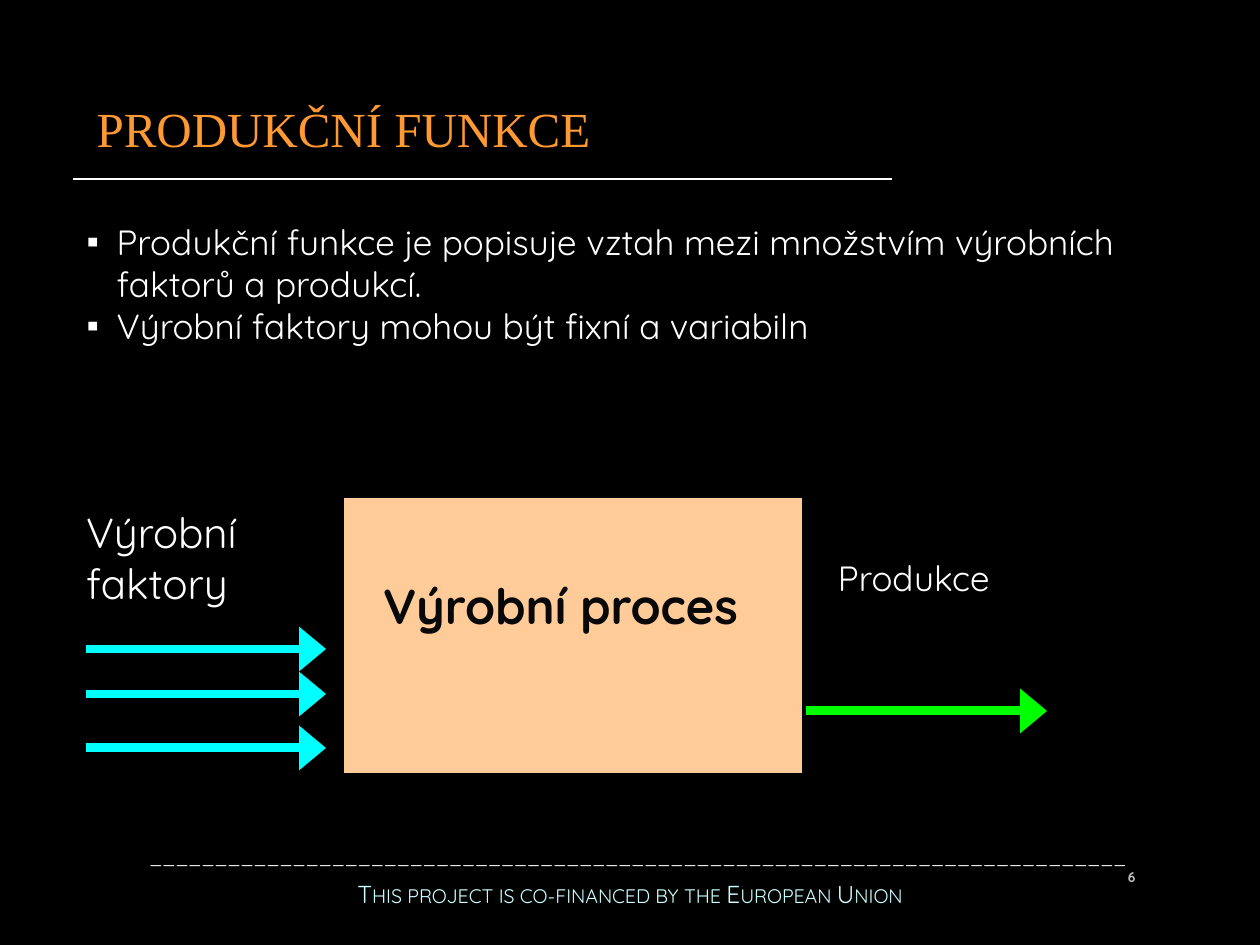
from lxml import etree
from pptx import Presentation
from pptx.dml.color import RGBColor
from pptx.enum import shapes, text
from pptx.oxml.ns import qn
from pptx.util import Pt

PX = 914400 / 126  # EMU in one px
COLORS = {
    "background": "000000", "title": "FF9933", "text": "FFFFFF", "number": "BFBFBF",
    "footer": "CCFFFF", "process": "FFCC99", "dark": "080808",
    "input": "00FFFF", "output": "00FF00",
}


def px(*lengths):
    return [round(n * PX) for n in lengths]


def write(sp, content, box=None, size=20, color="text", font="Quicksand", bold=False,
          align=text.PP_ALIGN.LEFT, anchor=text.MSO_ANCHOR.TOP, inset=None):
    """Fill a shape with one paragraph per line and return the paragraphs."""
    if box:
        sp.left, sp.top, sp.width, sp.height = px(*box)
    tf = sp.text_frame
    tf.word_wrap = True
    tf.auto_size = text.MSO_AUTO_SIZE.NONE
    tf.vertical_anchor = anchor
    if inset is not None:
        tf.margin_left = tf.margin_top = tf.margin_right = tf.margin_bottom = inset
    tf.text = content
    for p in tf.paragraphs:
        p.alignment = align
        p.space_before = Pt(0)
        for r in p.runs:
            r.font.name, r.font.size, r.font.bold = font, Pt(size), bold
            r.font.color.rgb = RGBColor.from_string(COLORS[color])
    return tf.paragraphs


prs = Presentation()
prs.slide_width, prs.slide_height = px(1260, 945)
s = prs.slides.add_slide(prs.slide_layouts[1])
s.background.fill.solid()
s.background.fill.fore_color.rgb = RGBColor.from_string(COLORS["background"])

# Title
write(s.shapes.title, "PRODUKČNÍ FUNKCE", (84, 84, 746, 88), size=28, color="title",
      font="Times New Roman", anchor=text.MSO_ANCHOR.MIDDLE)

# Bulleted list
items = ("Produkční funkce je popisuje vztah mezi množstvím výrobních faktorů a produkcí.\n"
         "Výrobní faktory mohou být fixní a variabiln")
for p in write(s.placeholders[1], items, (74, 214, 1144, 218)):
    pPr = p._p.get_or_add_pPr()
    indent = px(30)[0]
    pPr.set("marL", str(indent))
    pPr.set("indent", str(-indent))
    clr = etree.SubElement(pPr, qn("a:buClr"))
    etree.SubElement(clr, qn("a:srgbClr"), val=COLORS["text"])
    etree.SubElement(pPr, qn("a:buFont"), typeface="Arial")
    etree.SubElement(pPr, qn("a:buChar"), char="▪")

# Process box
sp = s.shapes.add_shape(shapes.MSO_SHAPE.RECTANGLE, *px(343, 497, 460, 277))
sp.shadow.inherit = False
sp.fill.solid()
sp.fill.fore_color.rgb = RGBColor.from_string(COLORS["process"])
sp.line.color.rgb = RGBColor.from_string(COLORS["background"])
sp.line.width = Pt(0.88)

# Diagram labels
for label, box, fmt in [
    ("Výrobní faktory", (86, 507, 210, 102), dict(size=24)),
    ("Produkce", (838, 556, 208, 43), dict(size=20)),
    ("Výrobní proces", (362, 576, 397, 59),
     dict(size=28, color="dark", bold=True, align=text.PP_ALIGN.CENTER)),
]:
    write(s.shapes.add_textbox(*px(*box)), label, inset=0, **fmt)

# Title rule, input arrows and output arrow
for x1, x2, y, color, width, arrow in [
    (73, 892, 179, "text", 0.75, False),
    *[(86, 326, y, "input", 5.13, True) for y in (649, 694, 748)],
    (806, 1047, 711, "output", 5.13, True),
]:
    line = s.shapes.add_connector(shapes.MSO_CONNECTOR.STRAIGHT, *px(x1, y, x2, y))
    line.line.color.rgb = RGBColor.from_string(COLORS[color])
    line.line.width = Pt(width)
    if arrow:
        etree.SubElement(line.line._get_or_add_ln(), qn("a:tailEnd"),
                         type="triangle", w="lg", len="med")
    etree.SubElement(line._element.spPr, qn("a:effectLst"))

# Footer in small capitals, its rule set slightly to the right
footer = write(s.shapes.add_textbox(*px(0, 829, 1260, 95)),
               "_" * 75 + "\nThis project is co-financed by the European Union",
               size=14, color="footer", align=text.PP_ALIGN.CENTER,
               anchor=text.MSO_ANCHOR.MIDDLE)
for p in footer:
    p.line_spacing = 0.8
    p.space_before, p.space_after = Pt(3), Pt(6)
    p.runs[0]._r.get_or_add_rPr().set("cap", "small")
footer[0].runs[0].font.color.rgb = RGBColor.from_string(COLORS["text"])
footer[0]._p.get_or_add_pPr().set("marL", str(px(16)[0]))

# Slide number
write(s.shapes.add_textbox(*px(1091, 852, 57, 50)), "6", size=8, color="number", bold=True,
      align=text.PP_ALIGN.RIGHT, anchor=text.MSO_ANCHOR.MIDDLE)

prs.save("out.pptx")
